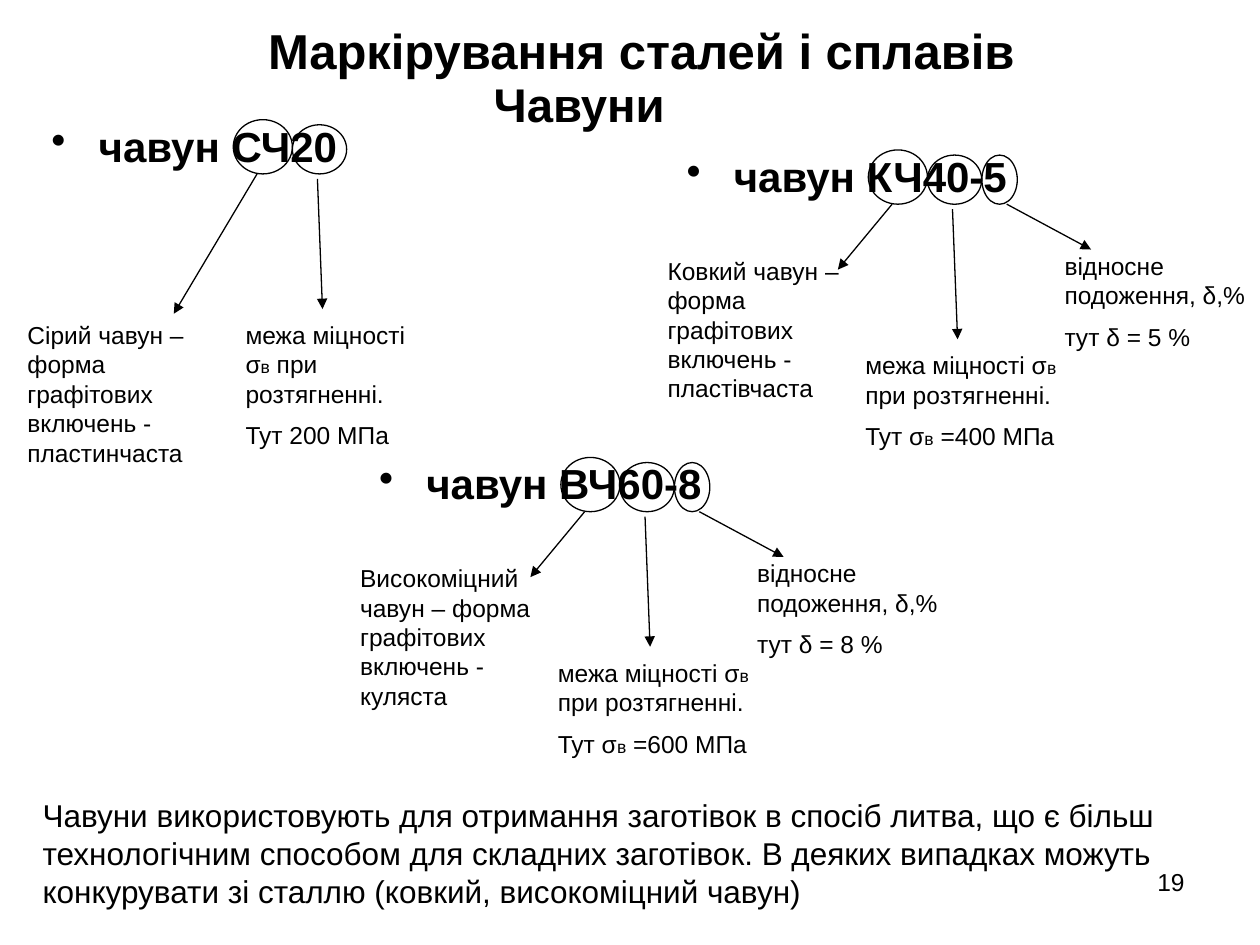
"""Build a slide on the marking of cast irons with three annotated grades."""
import pptx
import pptx.chart.data
import pptx.dml.color
import pptx.enum.shapes
import pptx.enum.text
import pptx.oxml
import pptx.oxml.ns
import pptx.util

Pt = pptx.util.Pt
ALIGN = pptx.enum.text.PP_ALIGN
ANCHOR = pptx.enum.text.MSO_ANCHOR
SHAPE = pptx.enum.shapes.MSO_SHAPE
BLACK = pptx.dml.color.RGBColor(0x00, 0x00, 0x00)
NAMESPACE = pptx.oxml.ns.nsdecls("a")

NOTE = {"size": Pt(14), "bold": False}
HEADING = {"size": Pt(24), "bold": True}
SUBTITLE = {"size": Pt(27), "bold": True}
TITLE = {"size": Pt(28), "bold": True}
SUMMARY = {"size": Pt(18), "bold": False}
LEFT = {"alignment": ALIGN.LEFT}
CENTER = {"alignment": ALIGN.CENTER}
RIGHT = {"alignment": ALIGN.RIGHT}
TIGHT = {"alignment": ALIGN.LEFT, "line_spacing": 0.9}

presentation = pptx.Presentation()
presentation.slide_width = Pt(720)
presentation.slide_height = Pt(540)
slide = presentation.slides.add_slide(presentation.slide_layouts[6])


def add_text(box, lines, font_format, paragraph_format=LEFT, anchor=ANCHOR.TOP):
    """Add a text box; text between underscores is set as a small index."""
    shape = slide.shapes.add_textbox(*map(Pt, box))
    frame = shape.text_frame
    frame.word_wrap = True
    frame.vertical_anchor = anchor
    for number, line in enumerate(lines):
        paragraph = frame.add_paragraph() if number else frame.paragraphs[0]
        if number:
            paragraph.space_before = Pt(7)
        for name, value in paragraph_format.items():
            setattr(paragraph, name, value)
        for position, part in enumerate(line.split("_")):
            run = paragraph.add_run()
            run.text = part
            run.font.name = "Arial"
            run.font.color.rgb = BLACK
            for name, value in font_format.items():
                setattr(run.font, name, value)
            if position % 2:
                run.font.size = Pt(10)
    return shape


def add_arrow(start_x, start_y, end_x, end_y):
    """Add a thin black arrow."""
    arrow = slide.shapes.add_connector(
        pptx.enum.shapes.MSO_CONNECTOR.STRAIGHT,
        *map(Pt, (start_x, start_y, end_x, end_y)))
    arrow.line.color.rgb = BLACK
    arrow.line.width = Pt(0.75)
    arrow.line._get_or_add_ln().append(
        pptx.oxml.parse_xml(f'<a:tailEnd {NAMESPACE} type="triangle"/>'))
    arrow._element.spPr.append(pptx.oxml.parse_xml(f"<a:effectLst {NAMESPACE}/>"))


add_text((42.5, 14.2, 648, 28.3), ["Маркірування сталей і сплавів"], TITLE, CENTER, ANCHOR.MIDDLE)
add_text((275, 43.2, 113, 33), ["Чавуни"], SUBTITLE, TIGHT)
add_text((17.3, 451.4, 692, 72), [
    "Чавуни використовують для отримання заготівок в спосіб литва, що є більш "
    "технологічним способом для складних заготівок. В деяких випадках можуть "
    "конкурувати зі сталлю (ковкий, високоміцний чавун)"], SUMMARY)
add_text((516.2, 491.8, 167.8, 37.4), ["19"], NOTE, RIGHT)

STRENGTH = "межа міцності σ_в_ при розтягненні."
ELONGATION = "відносне подоження, δ,%"
STRENGTH_BOX = (102.2, 110.9, 124.6, 65.5)
FORM_BOX = (-10.8, 56.9, 113, 90.7)
ELONGATION_BOX = (216, 54, 118.8, 65.5)
FORM_TIP = (93.6, 68.4)

grades = [
    ((22.3, 68.4), "чавун СЧ20", (77, 110.9), [
        ((-13.7, 110.9, 110.2, 90.7), ["Сірий чавун – форма графітових включень - пластинчаста"]),
        ((110.9, 110.9, 115.9, 82.8), [STRENGTH, "Тут 200 МПа"])]),
    ((209.5, 261.4), "чавун ВЧ60-8", FORM_TIP, [
        (FORM_BOX, ["Високоміцний чавун – форма графітових включень - куляста"]),
        (STRENGTH_BOX, [STRENGTH, "Тут σ_в_ =600 МПа"]),
        (ELONGATION_BOX, [ELONGATION, "тут δ = 8 %"])]),
    ((385.2, 85.7), "чавун КЧ40-5", FORM_TIP, [
        (FORM_BOX, ["Ковкий чавун – форма графітових включень - пластівчаста"]),
        (STRENGTH_BOX, [STRENGTH, "Тут σ_в_ =400 МПа"]),
        (ELONGATION_BOX, [ELONGATION, "тут δ = 5 %"])]),
]
rings = [(111, 0, 33.8, 31), (144.8, 2.9, 31, 28.1), (175.9, 2.9, 20.2, 28.1)]

for (left, top), grade, form_tip, notes in grades:
    heading = add_text((left, top, 207, 33), [grade], HEADING, TIGHT)
    properties = heading.text_frame.paragraphs[0]._p.get_or_add_pPr()
    properties.set("marL", str(Pt(27)))
    properties.set("indent", str(-Pt(27)))
    properties.append(pptx.oxml.parse_xml(f'<a:buChar {NAMESPACE} char="•"/>'))
    arrows = [(124.6, 31, *form_tip), (159.1, 33.8, 162, 108.2), (190.1, 31, 238.3, 56.9)]
    for (box, lines), ring, arrow in zip(notes, rings, arrows):
        add_text((left + box[0], top + box[1], *box[2:]), lines, NOTE)
        ellipse = slide.shapes.add_shape(
            SHAPE.OVAL, *map(Pt, (left + ring[0], top + ring[1], *ring[2:])))
        ellipse.shadow.inherit = False
        ellipse.fill.background()
        ellipse.line.color.rgb = BLACK
        ellipse.line.width = Pt(0.75)
        add_arrow(left + arrow[0], top + arrow[1], left + arrow[2], top + arrow[3])

presentation.save("out.pptx")
